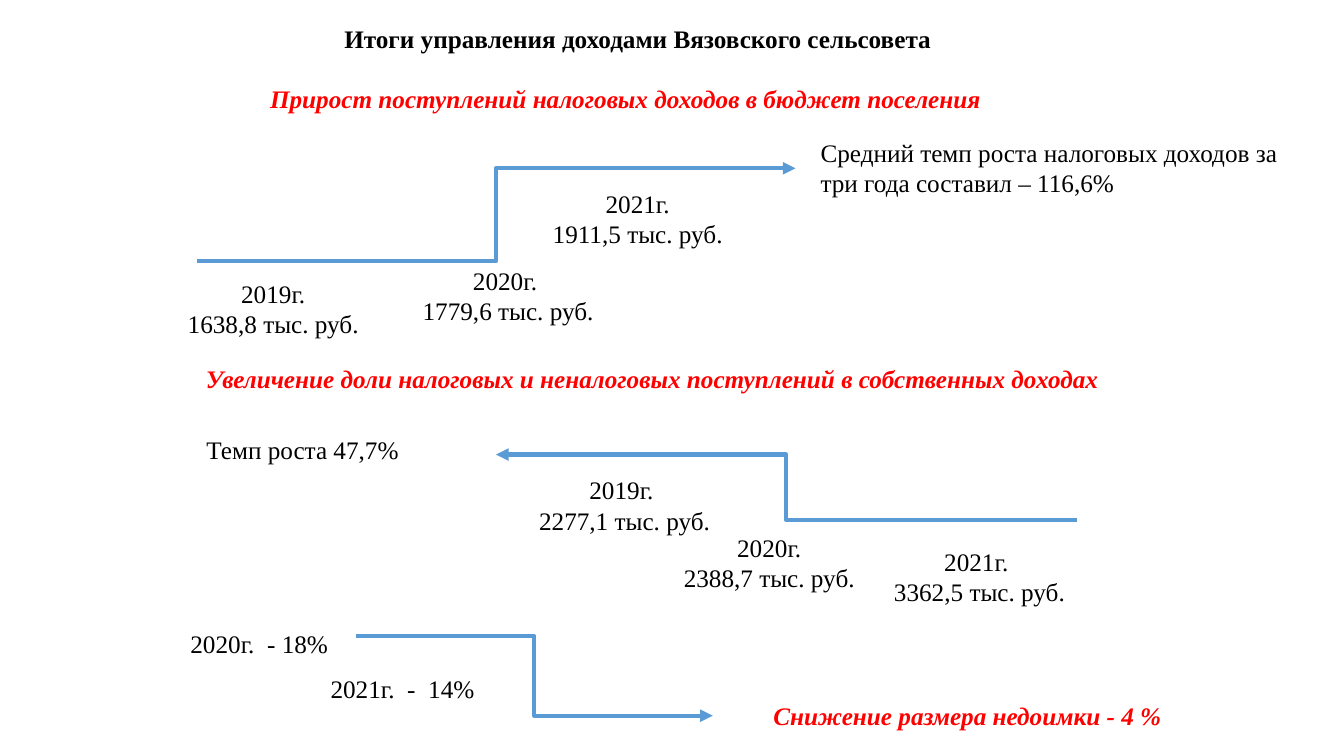
import pptx
import pptx.util
import pptx.dml.color
import pptx.enum.shapes
import pptx.enum.text
import pptx.oxml
import pptx.oxml.ns

Inches = pptx.util.Inches
Pt = pptx.util.Pt
RGBColor = pptx.dml.color.RGBColor
LEFT = pptx.enum.text.PP_ALIGN.LEFT
CENTER = pptx.enum.text.PP_ALIGN.CENTER

BLACK = RGBColor(0x00, 0x00, 0x00)
RED = RGBColor(0xFF, 0x00, 0x00)
BLUE = RGBColor(0x5B, 0x9B, 0xD5)
FONT = "Times New Roman"
SIZE = Pt(18)
LINE_H = 0.4
TWO_LINE_H = 0.71

TITLE = ("Итоги управления доходами Вязовского сельсовета", 2.45, 0.18, 7.75, LINE_H)

HEADINGS = [
    ("Прирост поступлений налоговых доходов в бюджет поселения", 2.58, 0.78, 7.32, LEFT),
    ("Увеличение доли налоговых и неналоговых поступлений в собственных доходах", 1.38, 3.56, 10.18, CENTER),
    ("Снижение размера недоимки - 4 %", 7.42, 6.9, 4.35, CENTER),
]

YEAR_AMOUNTS = [
    ("2019г.", "1638,8 тыс. руб.", 1.75, 2.71, 1.92),
    ("2020г. ", "1779,6 тыс. руб.", 4.08, 2.58, 1.92),
    ("2021г.", "1911,5 тыс. руб.", 5.37, 1.82, 1.91),
    ("2019г. ", "2277,1 тыс. руб.", 5.24, 4.66, 1.91),
    ("2020г.", "2388,7 тыс. руб.", 6.61, 5.23, 2.04),
    ("2021г. ", "3362,5 тыс. руб.", 8.65, 5.37, 2.13),
]

NOTES = [
    ("Средний темп роста налоговых доходов за три года составил – 116,6%", 8.04, 1.31, 5.14, TWO_LINE_H, True),
    ("Темп роста 47,7%", 1.95, 4.26, 2.13, LINE_H, False),
    ("2020г.  - 18%", 1.79, 6.18, 1.58, LINE_H, False),
    ("2021г.  -  14%", 3.18, 6.63, 1.64, LINE_H, False),
]

STEP_ARROWS = [
    (1.95, 2.59, 7.89, 1.67),
    (10.68, 5.16, 4.92, 4.51),
    (3.53, 6.31, 7.07, 7.1),
]


def fill_text(sp, lines, align, color=BLACK, bold=False, italic=False, wrap=False):
    tf = sp.text_frame
    tf.word_wrap = wrap
    tf.auto_size = pptx.enum.text.MSO_AUTO_SIZE.NONE
    tf.vertical_anchor = pptx.enum.text.MSO_ANCHOR.TOP
    for i, line in enumerate(lines):
        p = tf.add_paragraph() if i else tf.paragraphs[0]
        p.add_run().text = line
        p.alignment = align
        p.font.name = FONT
        p.font.size = SIZE
        p.font.color.rgb = color
        p.font.bold = bold
        p.font.italic = italic


def add_text(s, box, *args, **style):
    sp = s.shapes.add_textbox(*map(Inches, box))
    fill_text(sp, *args, **style)


def add_step_arrow(s, ends):
    cn = s.shapes.add_connector(pptx.enum.shapes.MSO_CONNECTOR.ELBOW, *map(Inches, ends))
    cn.line.color.rgb = BLUE
    cn.line.width = Pt(3)
    ln = cn.line._get_or_add_ln()
    ln.append(pptx.oxml.parse_xml(f'<a:tailEnd {pptx.oxml.ns.nsdecls("a")} type="triangle"/>'))
    ln.addnext(pptx.oxml.parse_xml(f'<a:effectLst {pptx.oxml.ns.nsdecls("a")}/>'))


def main():
    prs = pptx.Presentation()
    prs.slide_width = Inches(13.33)
    prs.slide_height = Inches(7.5)
    s = prs.slides.add_slide(prs.slide_layouts[5])

    text, *box = TITLE
    title = s.shapes.title
    title.left, title.top, title.width, title.height = map(Inches, box)
    fill_text(title, [text], CENTER, bold=True, wrap=True)

    for text, x, y, w, align in HEADINGS:
        add_text(s, (x, y, w, LINE_H), [text], align, color=RED, bold=True, italic=True)
    for year, amount, x, y, w in YEAR_AMOUNTS:
        add_text(s, (x, y, w, TWO_LINE_H), [year, amount], CENTER)
    for text, x, y, w, h, wrap in NOTES:
        add_text(s, (x, y, w, h), [text], LEFT, wrap=wrap)
    for ends in STEP_ARROWS:
        add_step_arrow(s, ends)

    prs.save("out.pptx")


if __name__ == "__main__":
    main()
